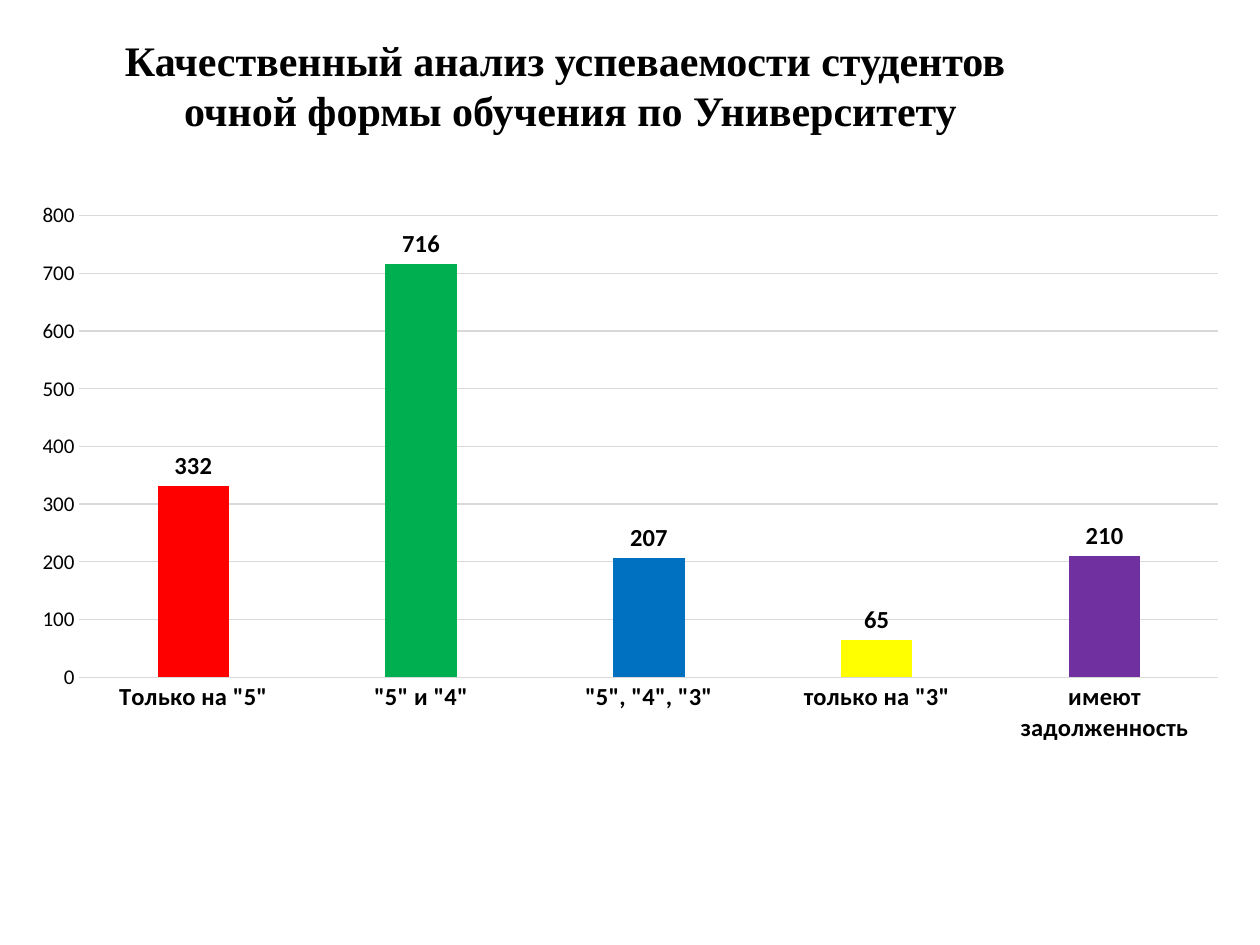
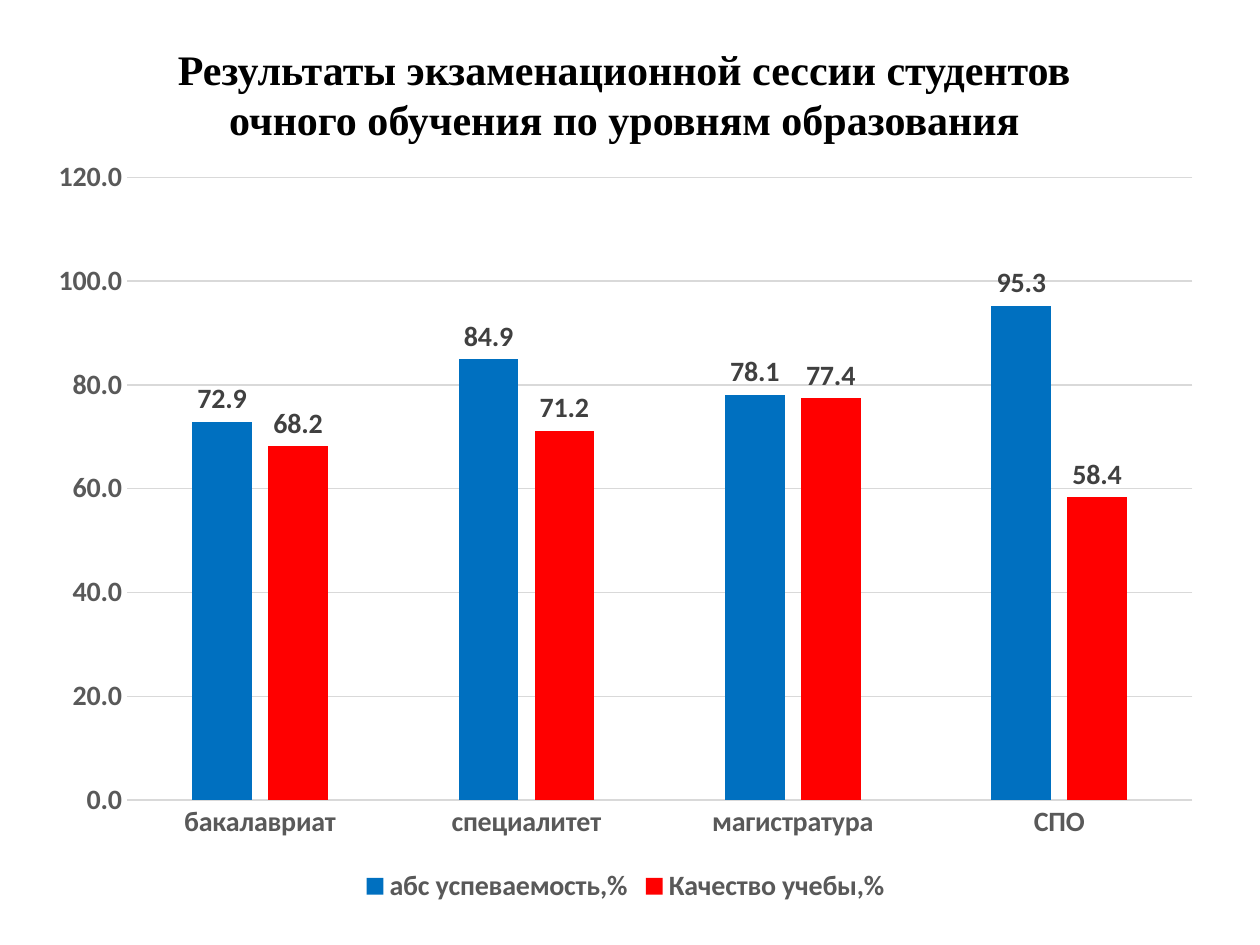
from pptx import Presentation
from pptx.chart.data import CategoryChartData
from pptx.dml.color import RGBColor
from pptx.enum.chart import XL_CHART_TYPE, XL_LABEL_POSITION, XL_LEGEND_POSITION, XL_TICK_MARK
from pptx.enum.text import MSO_ANCHOR, PP_ALIGN
from pptx.util import Emu, Pt

PX_PER_INCH = 126
BLANK_LAYOUT = 6
BLACK, GREY, DARK_GREY, LINE_GREY = "000000", "595959", "404040", "D9D9D9"
RED, GREEN, BLUE, YELLOW, PURPLE = "FF0000", "00B050", "0070C0", "FFFF00", "7030A0"
TITLE_FONT = {"name": "Times New Roman", "size": Pt(24), "bold": True}


def px(length):
    return Emu(round(length * 914400 / PX_PER_INCH))


def color(hex_text):
    return RGBColor.from_string(hex_text)


def set_all(target, values):
    for name, value in values.items():
        setattr(target, name, value)


def style_font(font, values, font_color):
    set_all(font, values)
    font.color.rgb = color(font_color)


def chart_font(size, bold=True):
    return {"name": "Calibri", "size": Pt(size), "bold": bold}


def fill_solid(shape_format, hex_text):
    shape_format.fill.solid()
    shape_format.fill.fore_color.rgb = color(hex_text)


def draw_line(line, hex_text):
    line.color.rgb = color(hex_text)
    line.width = Pt(0.75)


def add_title(page, box, lines):
    frame = page.shapes.add_textbox(*map(px, box)).text_frame
    set_all(frame, {"word_wrap": True, "vertical_anchor": MSO_ANCHOR.TOP})
    for index, line in enumerate(lines):
        para = frame.paragraphs[0] if index == 0 else frame.add_paragraph()
        para.alignment = PP_ALIGN.CENTER
        span = para.add_run()
        span.text = line
        style_font(span.font, TITLE_FONT, BLACK)


def style_axes(chart, category_font, value_font, axis_color, top, step, number_format):
    category_axis, value_axis = chart.category_axis, chart.value_axis
    for axis, font in ((category_axis, category_font), (value_axis, value_font)):
        set_all(axis, {"major_tick_mark": XL_TICK_MARK.NONE,
                       "minor_tick_mark": XL_TICK_MARK.NONE})
        style_font(axis.tick_labels.font, font, axis_color)
    category_axis.has_major_gridlines = False
    draw_line(category_axis.format.line, LINE_GREY)
    set_all(value_axis, {"minimum_scale": 0, "maximum_scale": top, "major_unit": step,
                         "has_major_gridlines": True})
    draw_line(value_axis.major_gridlines.format.line, LINE_GREY)
    value_axis.format.line.fill.background()
    set_all(value_axis.tick_labels, {"number_format": number_format,
                                     "number_format_is_linked": False})


def add_column_chart(page, box, categories, columns, label_font, label_color, number_format):
    """Draw clustered columns; columns holds (name, values, colour) for each series."""
    data = CategoryChartData(number_format=number_format)
    data.categories = categories
    for name, values, _ in columns:
        data.add_series(name, values)
    chart = page.shapes.add_chart(XL_CHART_TYPE.COLUMN_CLUSTERED, *map(px, box), data).chart
    set_all(chart, {"has_title": False, "has_legend": False})
    style_font(chart.font, label_font, BLACK)
    plot = chart.plots[0]
    set_all(plot, {"gap_width": 219, "overlap": -27, "vary_by_categories": False})
    for series, (_, _, series_color) in zip(plot.series, columns):
        series.invert_if_negative = False
        fill_solid(series.format, series_color)
        labels = series.data_labels
        set_all(labels, {"show_value": True, "position": XL_LABEL_POSITION.OUTSIDE_END,
                         "number_format": number_format, "number_format_is_linked": False})
        style_font(labels.font, label_font, label_color)
    return chart


def add_legend(chart, font, font_color):
    chart.has_legend = True
    set_all(chart.legend, {"position": XL_LEGEND_POSITION.BOTTOM, "include_in_layout": False})
    style_font(chart.legend.font, font, font_color)


def build_grades_page(page):
    add_title(page, (35, 28, 1071, 76),
              ["Качественный анализ успеваемости студентов ",
               "очной формы обучения по Университету"])
    grades = {
        'Только на "5"': (332, RED),
        '"5" и "4"': (716, GREEN),
        '"5", "4", "3"': (207, BLUE),
        'только на "3"': (65, YELLOW),
        "имеют задолженность": (210, PURPLE),
    }
    counts, bar_colors = zip(*grades.values())
    font = chart_font(14)
    chart = add_column_chart(page, (18, 192, 1225, 562), list(grades),
                             [("Series 1", counts, RED)], font, BLACK, "General")
    for index, bar_color in enumerate(bar_colors):
        fill_solid(chart.plots[0].series[0].points[index].format, bar_color)
    style_axes(chart, font, chart_font(12, False), BLACK, 800, 100, "General")


def build_levels_page(page):
    add_title(page, (84, 37, 1091, 73),
              ["Результаты экзаменационной сессии студентов ",
               "очного обучения по уровням образования "])
    levels = ["бакалавриат", "специалитет", "магистратура", "СПО"]
    columns = [("абс успеваемость,%", (72.9, 84.9, 78.1, 95.3), BLUE),
               ("Качество учебы,%", (68.2, 71.2, 77.4, 58.4), RED)]
    font = chart_font(16)
    chart = add_column_chart(page, (35, 145, 1181, 764), levels, columns, font, DARK_GREY, "0.0")
    style_axes(chart, font, font, GREY, 120, 20, "0.0")
    add_legend(chart, font, GREY)


def main():
    deck = Presentation()
    set_all(deck, {"slide_width": px(1260), "slide_height": px(945)})
    for build_page in (build_grades_page, build_levels_page):
        build_page(deck.slides.add_slide(deck.slide_layouts[BLANK_LAYOUT]))
    deck.save("out.pptx")


if __name__ == "__main__":
    main()
